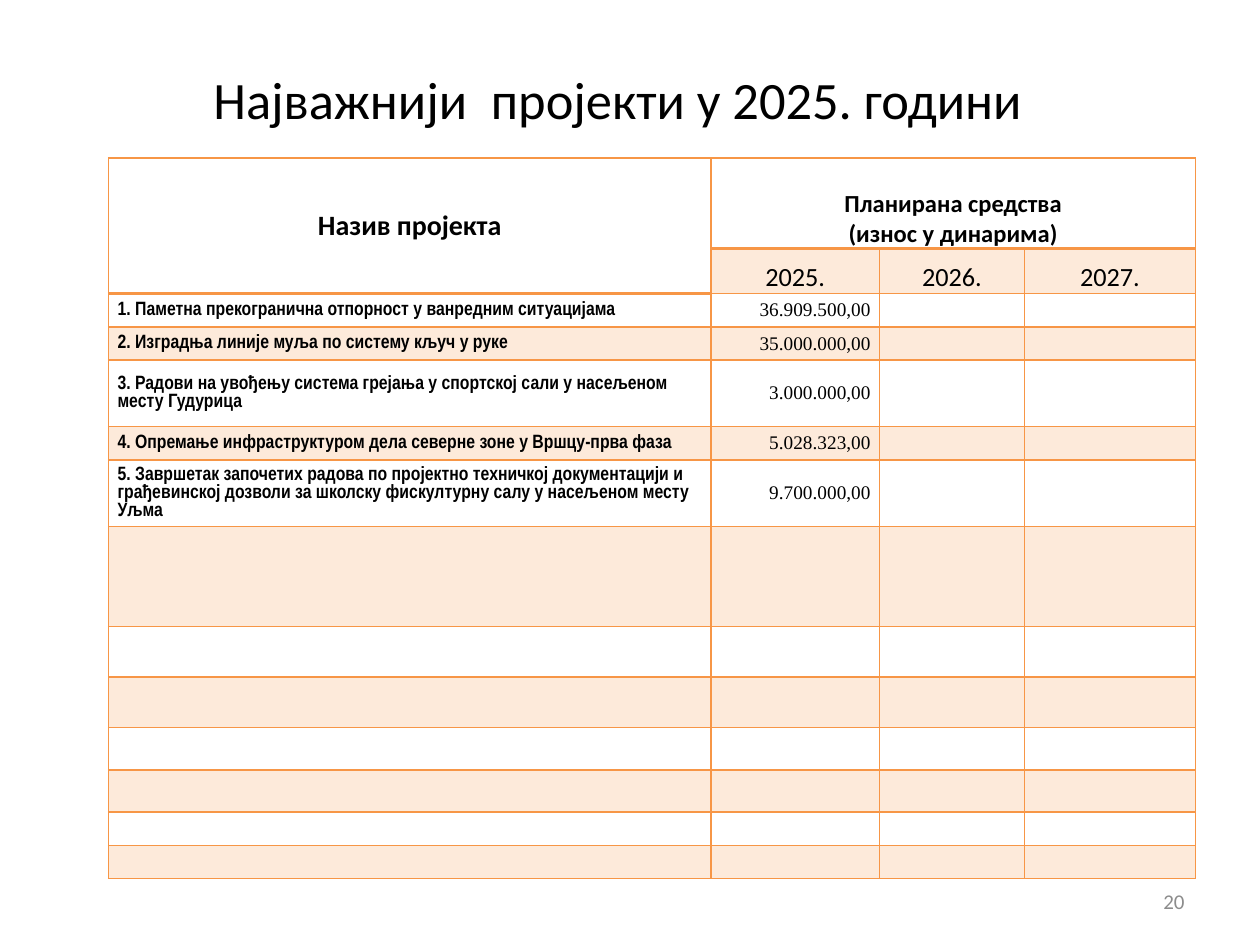
from lxml.etree import SubElement
from pptx import Presentation
from pptx.dml.color import RGBColor
from pptx.enum.text import MSO_ANCHOR, PP_ALIGN
from pptx.oxml import parse_xml
from pptx.oxml.ns import nsdecls, qn
from pptx.util import Cm, Pt

BLACK = RGBColor(0x00, 0x00, 0x00)
GREY = RGBColor(0x8C, 0x8C, 0x8C)
ORANGE = RGBColor(0xF7, 0x96, 0x46)
PEACH = RGBColor(0xFD, 0xEA, 0xDA)

HEADING = {"name": "Calibri", "size": Pt(16), "bold": True}
FUNDS = {"name": "Calibri", "size": Pt(14), "bold": True}
YEAR = {"name": "Calibri", "size": Pt(15), "bold": False}
PROJECT = {"name": "Arial Narrow", "size": Pt(11), "bold": True}
AMOUNT = {"name": "Times New Roman", "size": Pt(11), "bold": False}

COLUMN_WIDTHS = [12.14, 3.4, 2.92, 3.45]
ROW_HEIGHTS = [1.82, 0.91, 0.67, 0.67, 1.34, 0.67, 1.34,
               2.02, 1.02, 1.02, 0.85, 0.85, 0.67, 0.67]
FIRST_PROJECT_ROW = 2
YEARS = ["2025.", "2026.", "2027."]
PROJECTS = [
    ("1. Паметна прекогранична отпорност у ванредним ситуацијама", "36.909.500,00"),
    ("2. Изградња линије муља по систему кључ у руке", "35.000.000,00"),
    ("3. Радови на увођењу система грејања у спортској сали у насељеном "
     "месту Гудурица", "3.000.000,00"),
    ("4. Опремање инфраструктуром дела северне зоне у Вршцу-прва фаза", "5.028.323,00"),
    ("5. Завршетак започетих радова по пројектно техничкој документацији и "
     "грађевинској дозволи за школску фискултурну салу у насељеном месту Уљма",
     "9.700.000,00"),
]


def write(frame, text, style, align, color=BLACK):
    """Fill a text frame and format each of its paragraphs."""
    frame.text = text
    for paragraph in frame.paragraphs:
        paragraph.alignment = align
        font = paragraph.runs[0].font
        font.color.rgb = color
        for attribute, value in style.items():
            setattr(font, attribute, value)


def set_borders(cell, bottom_points):
    properties = cell._tc.get_or_add_tcPr()
    for position, side in enumerate("LRTB"):
        width = Pt(bottom_points if side == "B" else 1)
        properties.insert(position, parse_xml(
            f'<a:ln{side} {nsdecls("a")} w="{width}"><a:solidFill>'
            f'<a:srgbClr val="{ORANGE}"/></a:solidFill></a:ln{side}>'))


presentation = Presentation()
presentation.slide_width, presentation.slide_height = Cm(25.4), Cm(19.05)
slide = presentation.slides.add_slide(presentation.slide_layouts[5])

title = slide.shapes.title
title.left, title.top, title.width, title.height = Cm(1.27), Cm(0.76), Cm(22.86), Cm(2.44)
title.text_frame.margin_right = Cm(0.74)
title.text_frame.vertical_anchor = MSO_ANCHOR.MIDDLE
write(title.text_frame, "Најважнији  пројекти у 2025. години",
      {"name": "Calibri", "size": Pt(30)}, PP_ALIGN.CENTER)

budget = slide.shapes.add_table(
    len(ROW_HEIGHTS), len(COLUMN_WIDTHS), Cm(2.19), Cm(3.19),
    Cm(sum(COLUMN_WIDTHS)), Cm(sum(ROW_HEIGHTS))).table
budget.first_row = budget.horz_banding = False
for column, width in zip(budget.columns, COLUMN_WIDTHS):
    column.width = Cm(width)
for row, height in zip(budget.rows, ROW_HEIGHTS):
    row.height = Cm(height)

for row_index, row in enumerate(budget.rows):
    for column_index, cell in enumerate(row.cells):
        cell.margin_left = cell.margin_right = Cm(0.18)
        cell.margin_top = cell.margin_bottom = 0
        cell.vertical_anchor = MSO_ANCHOR.MIDDLE
        if row_index % 2:
            cell.fill.solid()
            cell.fill.fore_color.rgb = PEACH
        else:
            cell.fill.background()
        under_heading = row_index == 0 or (row_index == 1 and column_index == 0)
        set_borders(cell, 2 if under_heading else 1)

name_heading, funds_heading = budget.cell(0, 0), budget.cell(0, 1)
name_heading.merge(budget.cell(1, 0))
funds_heading.merge(budget.cell(0, 3))
write(name_heading.text_frame, "Назив пројекта", HEADING, PP_ALIGN.CENTER)
write(funds_heading.text_frame, "Планирана средства\n(износ у динарима)",
      FUNDS, PP_ALIGN.CENTER)
funds_heading.vertical_anchor = MSO_ANCHOR.BOTTOM

for column_index, year in enumerate(YEARS, start=1):
    year_cell = budget.cell(1, column_index)
    year_cell.vertical_anchor = MSO_ANCHOR.BOTTOM
    write(year_cell.text_frame, year, YEAR, PP_ALIGN.CENTER)

for row_index, (project, amount) in enumerate(PROJECTS, start=FIRST_PROJECT_ROW):
    write(budget.cell(row_index, 0).text_frame, project, PROJECT, PP_ALIGN.LEFT)
    write(budget.cell(row_index, 1).text_frame, amount, AMOUNT, PP_ALIGN.RIGHT)

# Small type in the empty cells keeps the low rows from growing
for cell in budget.iter_cells():
    if not cell.text:
        SubElement(cell.text_frame.paragraphs[0]._p, qn("a:endParaRPr"), sz="1100")

page_number = slide.shapes.add_textbox(Cm(18.21), Cm(17.65), Cm(5.92), Cm(1.02)).text_frame
page_number.word_wrap = True
page_number.vertical_anchor = MSO_ANCHOR.MIDDLE
write(page_number, "20", {"name": "Calibri", "size": Pt(12)}, PP_ALIGN.RIGHT, GREY)

presentation.save("out.pptx")
